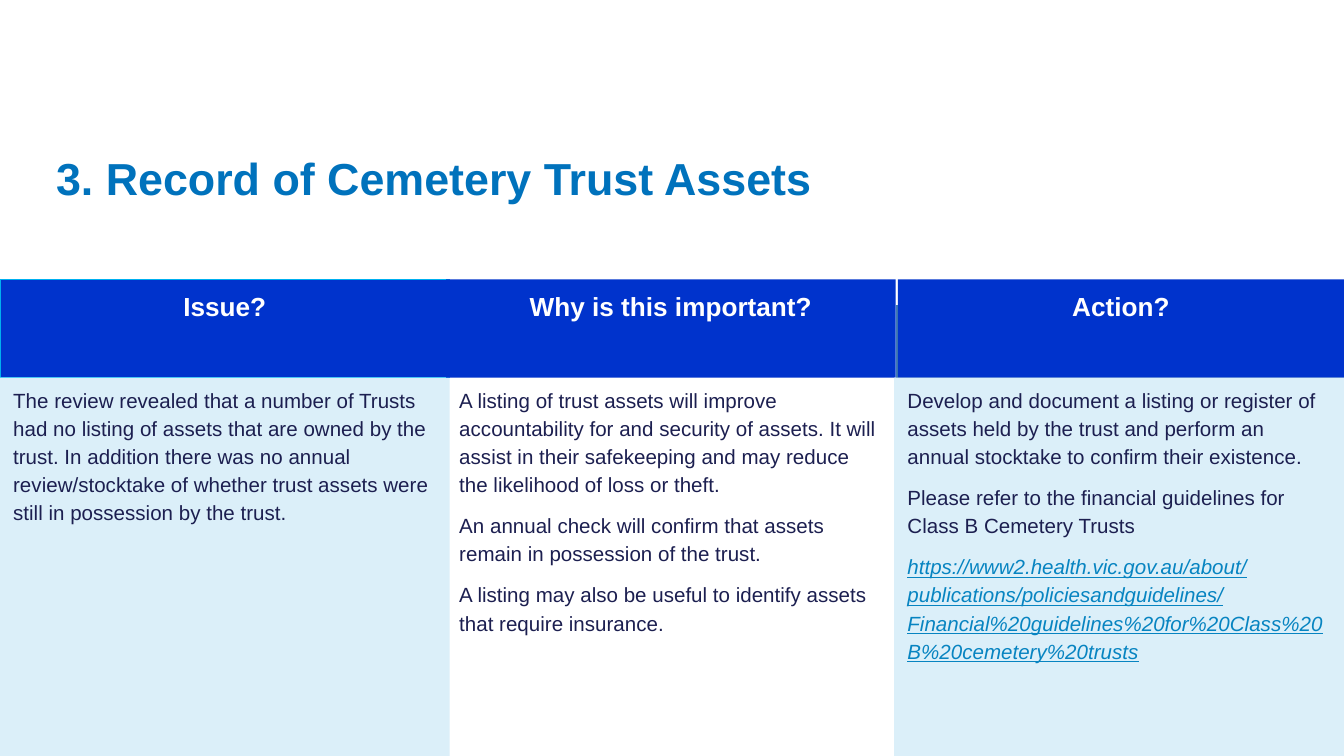
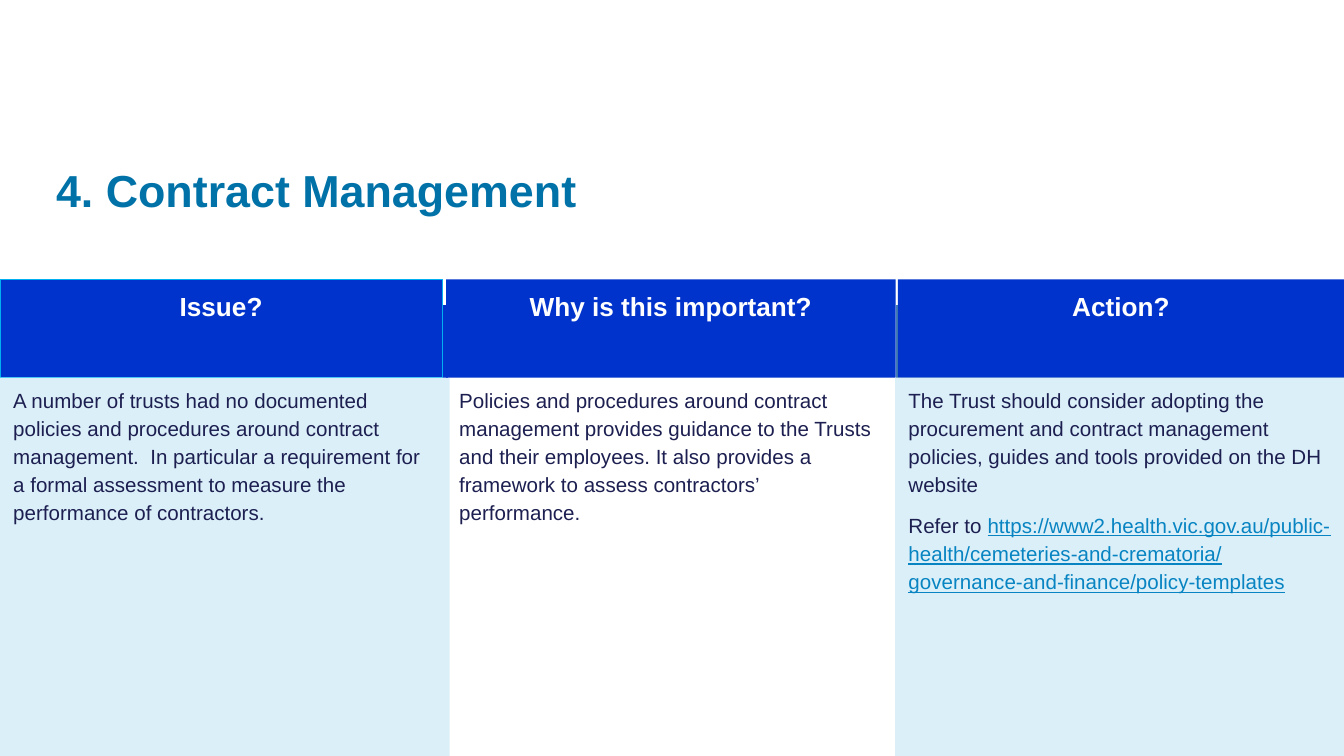
"""Build two slides on cemetery trust review findings, each with issue, importance and action columns."""
from pptx import Presentation
from pptx.dml.color import RGBColor as RGB
from pptx.enum.shapes import MSO_SHAPE as Shape
from pptx.enum.text import MSO_ANCHOR as Anchor, PP_ALIGN as Align
from pptx.util import Cm, Pt

COLORS = {
    "band": "0033CC", "side": "427CB2", "outline": "00B0F0", "panel": "DBEFF9",
    "white": "FFFFFF", "body": "1C1F50", "link": "0784C1",
}
FONT = "Arial"
SLIDE_WIDTH, SLIDE_HEIGHT = 25.4, 14.29
BACKDROP_TOP, HEADER_TOP, BODY_TOP = 5.77, 5.28, 7.14
COLUMN_WIDTH = 8.5
HEADINGS = ["Issue?", "Why is this important?", "Action?"]

FINDINGS = [
    {
        "title": "3. Record of Cemetery Trust Assets",
        "title_color": "0072BC", "title_top": 2.59, "title_height": 1.32,
        "issue_width": 8.5, "action_left": 16.9, "link_italic": True,
        "columns": [
            ["The review revealed that a number of Trusts had no listing of assets that are owned by the trust. "
             "In addition there was no annual review/stocktake of whether trust assets were still in possession "
             "by the trust."],
            ["A listing of trust assets will improve accountability for and security of assets. It will assist in "
             "their safekeeping and may reduce the likelihood of loss or theft.",
             "An annual check will confirm that assets remain in possession of the trust.",
             "A listing may also be useful to identify assets that require insurance."],
            ["Develop and document a listing or register of assets held by the trust and perform an annual "
             "stocktake to confirm their existence.",
             "Please refer to the financial guidelines for Class B Cemetery Trusts",
             "https://www2.health.vic.gov.au/about/publications/policiesandguidelines/"
             "Financial%20guidelines%20for%20Class%20B%20cemetery%20trusts"],
        ],
    },
    {
        "title": "4. Contract Management",
        "title_color": "0072A8", "title_top": 2.46, "title_height": 2.03,
        "issue_width": 8.36, "action_left": 16.92, "link_italic": False,
        "columns": [
            ["A number of trusts had no documented policies and procedures around contract management.  "
             "In particular a requirement for a formal assessment to measure the performance of contractors."],
            ["Policies and procedures around contract management provides guidance to the Trusts and their "
             "employees. It also provides a framework to assess contractors’ performance."],
            ["The Trust should consider adopting the procurement and contract management policies, guides and "
             "tools provided on the DH website",
             "Refer to https://www2.health.vic.gov.au/public-health/cemeteries-and-crematoria/"
             "governance-and-finance/policy-templates"],
        ],
    },
]


def add_box(slide, left, top, width, height, fill=None, outline=None):
    """Add a rectangle, or a plain text box when there is no fill."""
    place = Cm(left), Cm(top), Cm(width), Cm(height)
    if fill is None:
        shape = slide.shapes.add_textbox(*place)
    else:
        shape = slide.shapes.add_shape(Shape.RECTANGLE, *place)
        shape.shadow.inherit = False
        shape.fill.solid()
        shape.fill.fore_color.rgb = RGB.from_string(fill)
        if outline:
            shape.line.color.rgb = RGB.from_string(outline)
            shape.line.width = Pt(0.75)
        else:
            shape.line.fill.background()
    shape.text_frame.word_wrap = True
    shape.text_frame.vertical_anchor = Anchor.TOP
    return shape


def write(shape, texts, size, color, bold=False, align=Align.LEFT, spacing=1.14, before=6, after=1,
          link_italic=False):
    """Write one paragraph per text, styling any web address as a link."""
    frame = shape.text_frame
    for index, text in enumerate(texts):
        paragraph = frame.add_paragraph() if index else frame.paragraphs[0]
        paragraph.alignment = align
        paragraph.line_spacing = spacing
        paragraph.space_before = Pt(before if index else 0)
        paragraph.space_after = Pt(after)
        paragraph.font.name = FONT
        paragraph.font.size = Pt(size)
        paragraph.font.bold = bold
        paragraph.font.color.rgb = RGB.from_string(color)
        plain, scheme, address = text.partition("https://")
        if plain:
            paragraph.add_run().text = plain
        if scheme:
            link = paragraph.add_run()
            link.text = scheme + address
            link.font.underline = True
            link.font.italic = link_italic
            link.font.color.rgb = RGB.from_string(COLORS["link"])


presentation = Presentation()
presentation.slide_width, presentation.slide_height = Cm(SLIDE_WIDTH), Cm(SLIDE_HEIGHT)

for finding in FINDINGS:
    slide = presentation.slides.add_slide(presentation.slide_layouts[6])
    third = SLIDE_WIDTH / 3
    for left, color in [(0, COLORS["band"]), (2 * third, COLORS["side"])]:
        add_box(slide, left, BACKDROP_TOP, third, SLIDE_HEIGHT - BACKDROP_TOP, color)

    title = add_box(slide, 0.81, finding["title_top"], 23.77, finding["title_height"])
    title.text_frame.vertical_anchor = Anchor.MIDDLE
    write(title, [finding["title"]], 24, finding["title_color"], bold=True, spacing=1.2, after=2)

    header_places = [(0, finding["issue_width"]), (8.43, COLUMN_WIDTH), (16.97, 8.43)]
    body_lefts = [0, 8.43, finding["action_left"]]
    outlines = [COLORS["outline"], None, None]
    panels = [COLORS["panel"], None, COLORS["panel"]]
    columns = zip(HEADINGS, header_places, outlines, body_lefts, panels, finding["columns"])
    for heading, (left, width), outline, body_left, panel, texts in columns:
        header = add_box(slide, left, HEADER_TOP, width, BODY_TOP - HEADER_TOP, COLORS["band"], outline)
        write(header, [heading], 14, COLORS["white"], bold=True, align=Align.CENTER)
        body = add_box(slide, body_left, BODY_TOP, COLUMN_WIDTH, SLIDE_HEIGHT - BODY_TOP, panel)
        write(body, texts, 11, COLORS["body"], link_italic=finding["link_italic"])

presentation.save("out.pptx")
